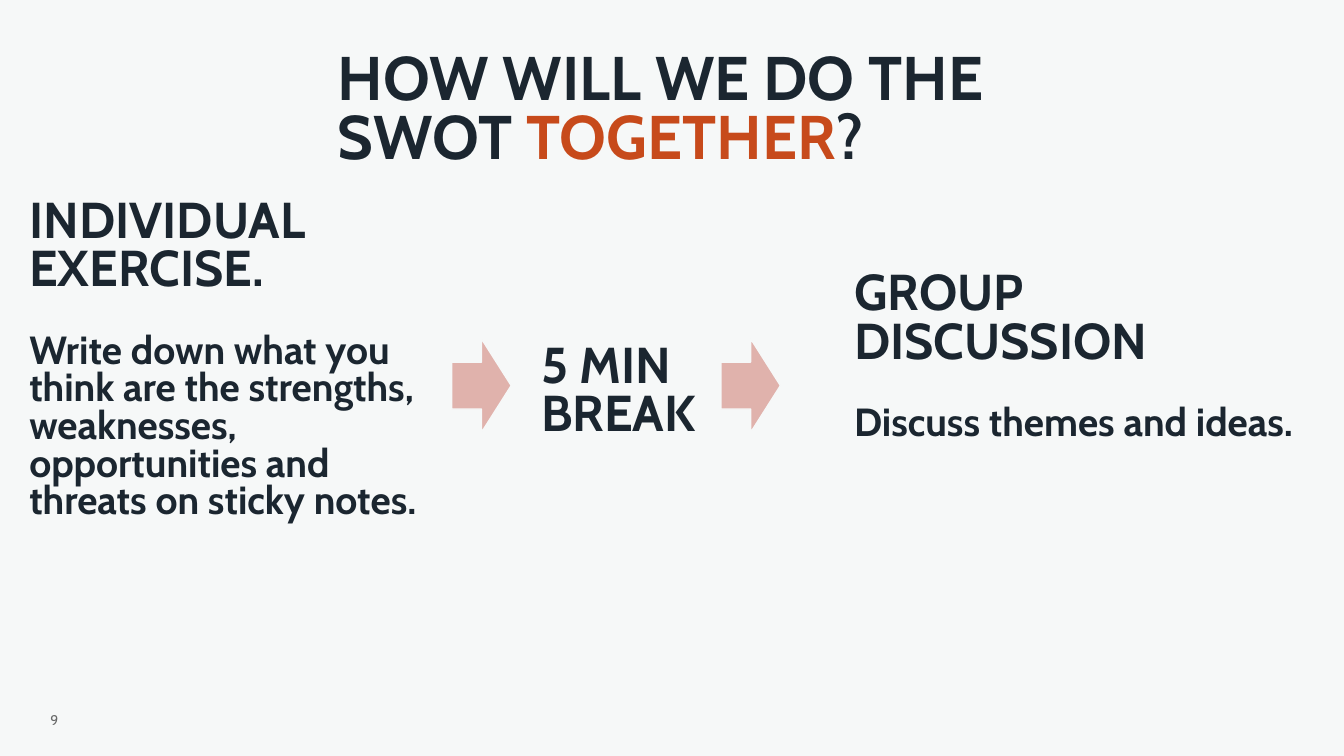
"""Builds the slide that explains how the SWOT is done together."""
from dataclasses import dataclass

from lxml import etree
from pptx import Presentation
from pptx.dml.color import RGBColor
from pptx.enum.shapes import MSO_SHAPE
from pptx.enum.text import MSO_ANCHOR, MSO_AUTO_SIZE, PP_ALIGN
from pptx.oxml.ns import qn
from pptx.util import Inches, Pt

DOWN_ARROW = MSO_SHAPE.DOWN_ARROW
TOP, MIDDLE = MSO_ANCHOR.TOP, MSO_ANCHOR.MIDDLE
LEFT, CENTER = PP_ALIGN.LEFT, PP_ALIGN.CENTER
NO_AUTOFIT = MSO_AUTO_SIZE.NONE
TWO_CONTENT_LAYOUT = 3


@dataclass(frozen=True)
class Theme:
    font: str = "Cabin"
    background: str = "F6F8F8"
    ink: str = "1B2630"
    accent: str = "C74A1B"
    arrow: str = "E0B2AC"
    muted: str = "686969"
    title_size: int = 44
    heading_size: int = 36
    body_size: int = 28
    number_size: int = 10
    line_spacing: float = 0.8
    paragraph_gap: int = 27


def apply(target, formats):
    for name, value in formats.items():
        setattr(target, name, value)


class SlideBuilder:
    def __init__(self, presentation, theme):
        self.theme = theme
        layout = presentation.slide_layouts[TWO_CONTENT_LAYOUT]
        self.slide = presentation.slides.add_slide(layout)
        self.fill(self.slide.background, theme.background)

    def fill(self, target, color):
        target.fill.solid()
        target.fill.fore_color.rgb = RGBColor.from_string(color)

    def place(self, shape, box, anchor=TOP):
        names = ("left", "top", "width", "height")
        apply(shape, dict(zip(names, map(Inches, box))))
        apply(shape.text_frame, {"word_wrap": True, "auto_size": NO_AUTOFIT,
                                 "vertical_anchor": anchor})
        return shape.text_frame

    def set_text(self, paragraph, runs, size, gap=0, align=LEFT, bold=True, spacing=None):
        properties = paragraph._p.get_or_add_pPr()
        apply(paragraph, {"alignment": align, "space_before": Pt(gap),
                          "line_spacing": spacing or self.theme.line_spacing})
        properties.set("marL", "0")
        properties.set("indent", "0")
        etree.SubElement(properties, qn("a:buNone"))
        for text, color in runs:
            run = paragraph.add_run()
            run.text = text
            apply(run.font, {"name": self.theme.font, "size": Pt(size), "bold": bold})
            run.font.color.rgb = RGBColor.from_string(color)

    def title(self, box, runs):
        frame = self.place(self.slide.shapes.title, box)
        self.set_text(frame.paragraphs[0], runs, self.theme.title_size)

    def step(self, index, box, heading, detail):
        theme = self.theme
        frame = self.place(self.slide.placeholders[index], box)
        self.set_text(frame.paragraphs[0], [(heading, theme.ink)], theme.heading_size)
        self.set_text(frame.add_paragraph(), [(detail, theme.ink)], theme.body_size,
                      gap=theme.paragraph_gap)

    def label(self, box, text):
        frame = self.place(self.slide.shapes.add_textbox(*map(Inches, box)), box)
        self.set_text(frame.paragraphs[0], [(text, self.theme.ink)], self.theme.heading_size)

    def page_number(self, box, text):
        frame = self.place(self.slide.shapes.add_textbox(*map(Inches, box)), box, MIDDLE)
        apply(frame, dict.fromkeys(
            ("margin_left", "margin_top", "margin_right", "margin_bottom"), 0))
        self.set_text(frame.paragraphs[0], [(text, self.theme.muted)],
                      self.theme.number_size, align=CENTER, bold=False, spacing=1.0)

    def arrow(self, box):
        shape = self.slide.shapes.add_shape(DOWN_ARROW, *map(Inches, box))
        shape.rotation = 270
        shape.shadow.inherit = False
        self.fill(shape, self.theme.arrow)
        self.fill(shape.line, self.theme.background)
        shape.line.width = Pt(1)


def main():
    theme = Theme()
    presentation = Presentation()
    apply(presentation, {"slide_width": Inches(13.33), "slide_height": Inches(7.5)})
    builder = SlideBuilder(presentation, theme)
    builder.title((3.25, 0.48, 7.7, 1.77), [
        ("HOW WILL WE DO THE SWOT ", theme.ink),
        ("TOGETHER", theme.accent),
        ("?", theme.ink),
    ])
    builder.step(1, (0.19, 1.93, 4.27, 4.23), "INDIVIDUAL EXERCISE.",
                 "Write down what you think are the strengths, weaknesses, "
                 "opportunities and threats on sticky notes.")
    builder.step(2, (8.37, 2.65, 4.6, 4.13), "GROUP DISCUSSION",
                 "Discuss themes and ideas.")
    for left in (4.31, 6.98):
        builder.arrow((left, 3.53, 0.93, 0.59))
    builder.label((5.27, 3.37, 2.17, 1.35), "5 MIN BREAK")
    builder.page_number((0.26, 7.02, 0.56, 0.25), "9")
    presentation.save("out.pptx")


if __name__ == "__main__":
    main()
